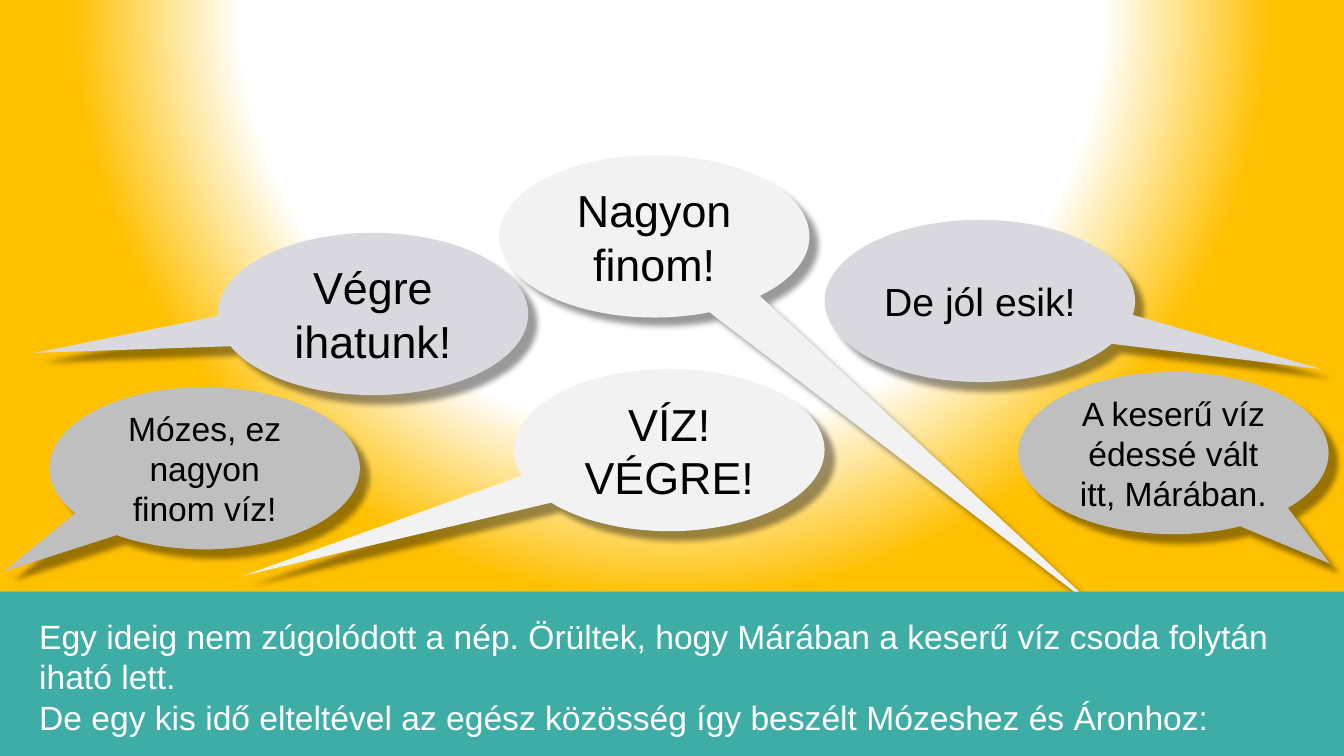
from pptx import Presentation
from pptx.dml.color import RGBColor
from pptx.enum.shapes import MSO_SHAPE
from pptx.enum.text import MSO_ANCHOR, PP_ALIGN
from pptx.oxml import parse_xml
from pptx.oxml.ns import nsdecls, qn
from pptx.util import Pt

WHITE = RGBColor(0xFF, 0xFF, 0xFF)
BLACK = RGBColor(0x00, 0x00, 0x00)
GOLD = RGBColor(0xFF, 0xC0, 0x00)
LAVENDER = RGBColor(0xD8, 0xD8, 0xDE)
GREY = RGBColor(0xBF, 0xBF, 0xBF)
PALE = RGBColor(0xF2, 0xF2, 0xF2)
TEAL = RGBColor(0x3D, 0xAD, 0xA5)

# Content: text, font size, fill, left, top, tail tip relative to the centre
BUBBLES = [
    ("Végre ihatunk!", 32, LAVENDER, 155.5, 166.3, (-1.089, 0.24)),
    ("Mózes, ez nagyon finom víz!", 24, GREY, 35.3, 276.5, (-0.644, 0.634)),
    ("Nagyon finom!", 32, PALE, 356.4, 110.9, (1.446, 2.327)),
    ("A keserű víz édessé vált itt, Márában.", 24, GREY, 727.2, 265.7, (0.504, 0.681)),
    ("De jól esik!", 28, LAVENDER, 589, 157, (1.101, 0.421)),
    ("VÍZ!\nVÉGRE!", 32, PALE, 367.2, 263.5, (-1.373, 0.775)),
]
NARRATION = (
    "Egy ideig nem zúgolódott a nép. Örültek, hogy Márában a keserű víz csoda folytán iható lett.\n"
    "De egy kis idő elteltével az egész közösség így beszélt Mózeshez és Áronhoz:"
)
GLOW_STOPS = [(0, WHITE), (56, WHITE), (78, GOLD)]

PAGE_WIDTH, PAGE_HEIGHT = 960, 540
BUBBLE_WIDTH, BUBBLE_HEIGHT = 221.8, 115.9
BAND_TOP = 422.6


def write(shape, text, size, color, align):
    frame = shape.text_frame
    frame.word_wrap = True
    frame.text = text
    for para in frame.paragraphs:
        para.alignment = align
        for span in para.runs:
            span.font.name = "Arial"
            span.font.size = Pt(size)
            span.font.color.rgb = color


def paint_glow(page):
    page.background.fill.gradient()
    stops = "".join(
        f'<a:gs pos="{pos * 1000}"><a:srgbClr val="{color}"/></a:gs>'
        for pos, color in GLOW_STOPS
    )
    glow = parse_xml(
        f'<a:gradFill {nsdecls("a")} rotWithShape="1"><a:gsLst>{stops}</a:gsLst>'
        '<a:path path="circle">'
        '<a:fillToRect l="50000" t="-80000" r="50000" b="180000"/>'
        '</a:path></a:gradFill>'
    )
    plain = page.element.find(".//" + qn("a:gradFill"))
    plain.getparent().replace(plain, glow)


def add_filled(page, kind, left, top, width, height, color):
    shape = page.shapes.add_shape(kind, Pt(left), Pt(top), Pt(width), Pt(height))
    shape.shadow.inherit = False
    shape.fill.solid()
    shape.fill.fore_color.rgb = color
    shape.line.fill.background()
    return shape


def add_bubble(page, text, size, color, left, top, tail):
    bubble = add_filled(page, MSO_SHAPE.OVAL_CALLOUT, left, top,
                        BUBBLE_WIDTH, BUBBLE_HEIGHT, color)
    bubble.adjustments[0], bubble.adjustments[1] = tail
    bubble.text_frame.vertical_anchor = MSO_ANCHOR.MIDDLE
    write(bubble, text, size, BLACK, PP_ALIGN.CENTER)
    # Soft shadow towards the lower right
    bubble.element.spPr.find(qn("a:effectLst")).append(parse_xml(
        f'<a:outerShdw {nsdecls("a")} blurRad="{Pt(4)}" dist="{Pt(9)}" dir="2700000" '
        'algn="tl" rotWithShape="0"><a:srgbClr val="000000"><a:alpha val="40000"/>'
        '</a:srgbClr></a:outerShdw>'
    ))


def main():
    deck = Presentation()
    deck.slide_width, deck.slide_height = Pt(PAGE_WIDTH), Pt(PAGE_HEIGHT)
    page = deck.slides.add_slide(deck.slide_layouts[6])
    paint_glow(page)

    # Speech bubbles
    for bubble in BUBBLES:
        add_bubble(page, *bubble)

    # Narration band, covering the longest tail
    add_filled(page, MSO_SHAPE.RECTANGLE, 0, BAND_TOP,
               PAGE_WIDTH, PAGE_HEIGHT - BAND_TOP, TEAL)
    box = page.shapes.add_textbox(Pt(20.9), Pt(436.3), Pt(913.7), Pt(94.3))
    write(box, NARRATION, 24, WHITE, PP_ALIGN.LEFT)

    deck.save("out.pptx")


if __name__ == "__main__":
    main()
